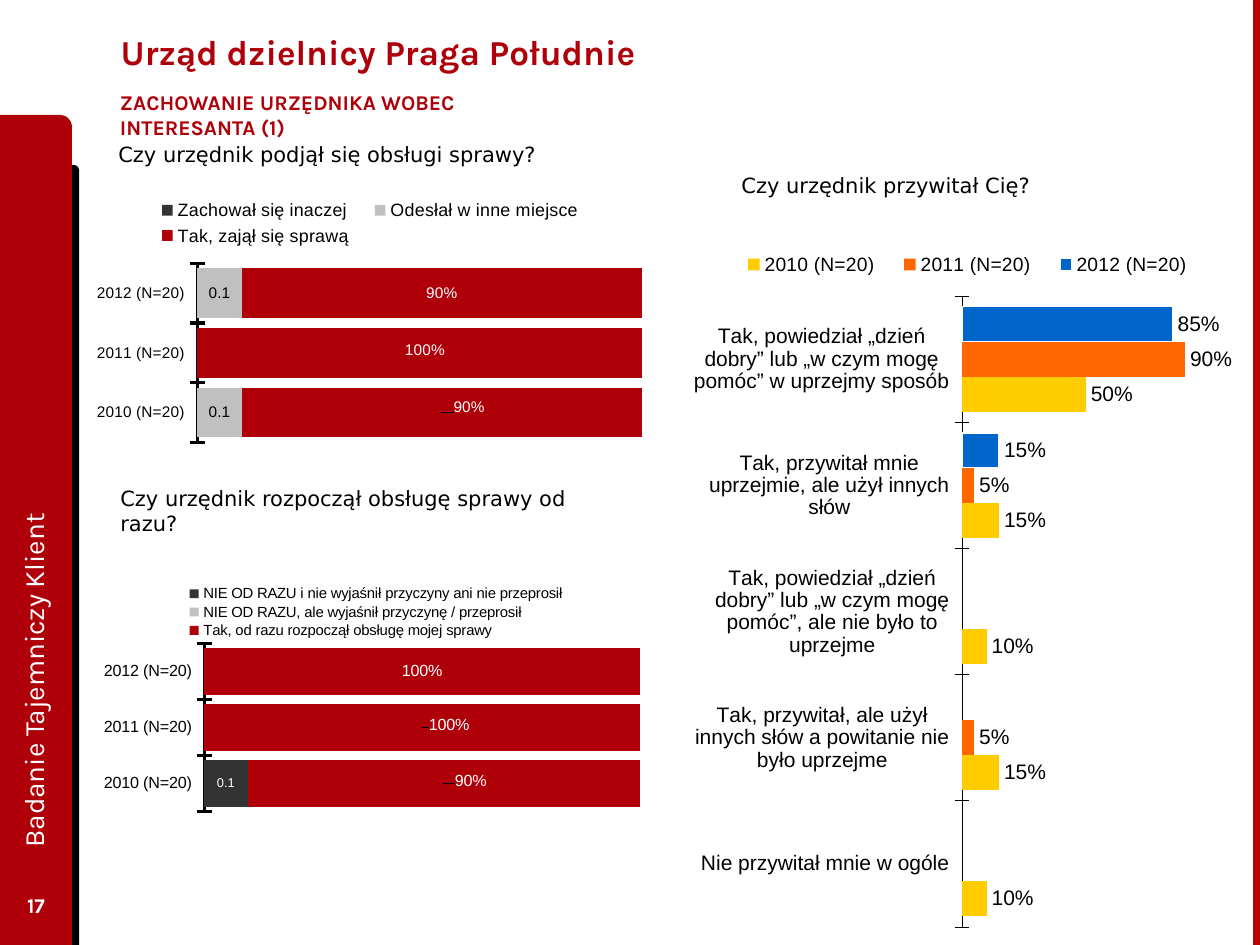
import pptx
import pptx.chart.data
import pptx.dml.color
import pptx.enum.chart
import pptx.enum.shapes
import pptx.enum.text
import pptx.oxml
import pptx.oxml.ns
import pptx.util

RED, BLACK, WHITE, DARK, GREY = "AF000A", "000000", "FFFFFF", "333333", "C0C0C0"
BLUE, ORANGE, YELLOW = "0066CC", "FF6600", "FFCC00"
CHART_TYPE = pptx.enum.chart.XL_CHART_TYPE
LABEL_POSITION = pptx.enum.chart.XL_LABEL_POSITION
LEGEND_POSITION = pptx.enum.chart.XL_LEGEND_POSITION
SHAPE = pptx.enum.shapes.MSO_SHAPE
ANCHOR = pptx.enum.text.MSO_ANCHOR
ALIGN = pptx.enum.text.PP_ALIGN
YEARS = ["2010 (N=20)", "2011 (N=20)", "2012 (N=20)"]


def px(length):
    return pptx.util.Emu(length * 914400 // 126)


def color(value):
    return pptx.dml.color.RGBColor.from_string(value)


def apply(target, values):
    for name, value in values.items():
        setattr(target, name, value)


def set_font(font, size, fill, name="Arial", bold=False):
    apply(font, {"size": pptx.util.Pt(size), "name": name, "bold": bold})
    font.color.rgb = color(fill)


def set_layout(parent, index, values, inner=False):
    qn = pptx.oxml.ns.qn
    for old in parent.findall(qn("c:layout")):
        parent.remove(old)
    layout = pptx.oxml.parse_xml(
        '<c:layout xmlns:c="http://schemas.openxmlformats.org/drawingml/2006/chart">'
        "<c:manualLayout/></c:layout>")
    fields = [("layoutTarget", "inner")] if inner else []
    if len(values) == 4:
        fields += [("xMode", "edge"), ("yMode", "edge")]
    fields += zip("xywh", values)
    for name, value in fields:
        layout[0].append(layout[0].makeelement(qn("c:" + name), {"val": str(value)}))
    parent.insert(index, layout)


class SlideBuilder:
    """Draws styled elements on the current slide."""

    def __init__(self, presentation):
        self.slide = presentation.slides.add_slide(presentation.slide_layouts[5])

    def panel(self, kind, box, fill):
        shape = self.slide.shapes.add_shape(kind, *map(px, box))
        shape.shadow.inherit = False
        shape.fill.solid()
        shape.fill.fore_color.rgb = color(fill)
        shape.line.fill.background()

    def set_text(self, shape, text, size, fill, name="Karla", bold=False,
                 align=ALIGN.LEFT, **frame_values):
        frame = shape.text_frame
        apply(frame, {"word_wrap": True, **frame_values})
        paragraph = frame.paragraphs[0]
        paragraph.alignment = align
        run = paragraph.add_run()
        run.text = text
        set_font(run.font, size, fill, name, bold)

    def title(self, box, text):
        shape = self.slide.shapes.title
        apply(shape, dict(zip(("left", "top", "width", "height"), map(px, box))))
        self.set_text(shape, text, 20, RED, bold=True, vertical_anchor=ANCHOR.MIDDLE)

    def text(self, box, text, size, fill, rotation=0, **values):
        shape = self.slide.shapes.add_textbox(*map(px, box))
        shape.rotation = rotation
        self.set_text(shape, text, size, fill, **values)

    def question(self, box, text):
        self.text(box, text, 12, BLACK, name="DejaVu Sans")

    def bar_chart(self, kind, box, categories, rows, plot_box, legend_box,
                  axis_size, legend_size, line_width, gap):
        data = pptx.chart.data.CategoryChartData()
        data.categories = categories
        for row in rows:
            data.add_series(row["name"], row["values"])
        chart = self.slide.shapes.add_chart(kind, *map(px, box), data).chart
        stacked = kind == CHART_TYPE.BAR_STACKED_100
        apply(chart, {"has_title": False, "has_legend": True})
        set_font(chart.font, axis_size, BLACK)

        apply(chart.legend, {
            "position": LEGEND_POSITION.TOP if stacked else LEGEND_POSITION.RIGHT,
            "include_in_layout": False})
        set_font(chart.legend.font, legend_size, BLACK)
        set_layout(chart.legend._element, 1, legend_box)

        plot = chart.plots[0]
        apply(plot, {"gap_width": gap, "overlap": 100 if stacked else 0,
                     "vary_by_categories": False})
        set_layout(chart._chartSpace.chart.plotArea, 0, plot_box, inner=True)

        axis = chart.category_axis
        apply(axis, {"major_tick_mark": pptx.enum.chart.XL_TICK_MARK.CROSS,
                     "has_major_gridlines": False, "reverse_order": not stacked})
        set_font(axis.tick_labels.font, axis_size, BLACK)
        axis.format.line.color.rgb = color(BLACK)
        axis.format.line.width = pptx.util.Pt(line_width)
        apply(chart.value_axis, {"visible": False, "has_major_gridlines": False})
        if not stacked:
            apply(chart.value_axis, {"minimum_scale": 0, "maximum_scale": 1, "major_unit": 0.2})

        for series, row in zip(plot.series, rows):
            self.style_series(series, row, stacked)

    def style_series(self, series, row, stacked):
        series.invert_if_negative = False
        series.format.fill.solid()
        series.format.fill.fore_color.rgb = color(row["fill"])
        if "outline" in row:
            series.format.line.color.rgb = color(row["outline"])
            series.format.line.width = pptx.util.Pt(1)
        position = LABEL_POSITION.CENTER if stacked else LABEL_POSITION.OUTSIDE_END
        labels = series.data_labels
        apply(labels, {"show_value": True, "position": position,
                       "number_format": row.get("format", "0%"),
                       "number_format_is_linked": False})
        set_font(labels.font, row["size"], row["ink"])
        for index, offset in enumerate(row.get("offsets", [])):
            label = series.points[index].data_label
            set_font(label.font, row["size"], row["ink"])
            element = label._dLbl
            set_layout(element, 1, offset)
            number_format = element.makeelement(
                pptx.oxml.ns.qn("c:numFmt"), {"formatCode": "0%", "sourceLinked": "0"})
            element.insert(2, number_format)


def main():
    presentation = pptx.Presentation()
    apply(presentation, {"slide_width": px(1260), "slide_height": px(945)})
    builder = SlideBuilder(presentation)

    builder.panel(SHAPE.ROUND_1_RECTANGLE, (49, 165, 30, 780), BLACK)
    builder.panel(SHAPE.ROUND_1_RECTANGLE, (0, 115, 72, 830), RED)
    builder.panel(SHAPE.RECTANGLE, (1253, 0, 7, 945), "BD0000")
    builder.title((108, 6, 979, 91), "Urząd dzielnicy Praga Południe")
    builder.text((-330, 465, 726, 64), "Badanie Tajemniczy Klient", 16, WHITE,
                 rotation=270, vertical_anchor=ANCHOR.MIDDLE)
    builder.text((0, 880, 72, 50), "17", 12, WHITE, bold=True, align=ALIGN.CENTER,
                 vertical_anchor=ANCHOR.MIDDLE)
    builder.text((95, 83, 485, 42), "ZACHOWANIE URZĘDNIKA WOBEC INTERESANTA (1)",
                 12, RED, bold=True, word_wrap=False, margin_left=px(25), margin_right=px(25))
    builder.question((108, 479, 490, 63), "Czy urzędnik rozpoczął obsługę sprawy od razu?")
    builder.question((106, 135, 501, 38), "Czy urzędnik podjął się obsługi sprawy?")
    builder.question((729, 166, 360, 38), "Czy urzędnik przywitał Cię?")

    greetings = [
        "Tak, powiedział „dzień dobry” lub „w czym mogę pomóc” w uprzejmy sposób",
        "Tak, przywitał mnie uprzejmie, ale użył innych słów",
        "Tak, powiedział „dzień dobry” lub „w czym mogę pomóc”, ale nie było to uprzejme",
        "Tak, przywitał, ale użył innych słów a powitanie nie było uprzejme",
        "Nie przywitał mnie w ogóle"]
    greeting_label = {"size": 12, "ink": BLACK}
    builder.bar_chart(
        CHART_TYPE.BAR_CLUSTERED, (692, 226, 551, 701), greetings,
        [{"name": YEARS[2], "values": (0.85, 0.15, None, None, None), "fill": BLUE,
          "outline": WHITE, **greeting_label},
         {"name": YEARS[1], "values": (0.9, 0.05, None, 0.05, None), "fill": ORANGE,
          **greeting_label},
         {"name": YEARS[0], "values": (0.5, 0.15, 0.1, 0.15, 0.1), "fill": YELLOW,
          **greeting_label}],
        (0.49, 0.1, 0.45, 0.9), (0.06, 0.03, 0.88, 0.05), 12, 11, 0.25, 60)

    builder.bar_chart(
        CHART_TYPE.BAR_STACKED_100, (102, 581, 538, 232), YEARS,
        [{"name": "NIE OD RAZU i nie wyjaśnił przyczyny ani nie przeprosił",
          "values": (0.1, None, None), "fill": DARK, "size": 7.3, "ink": WHITE,
          "format": "General"},
         {"name": "NIE OD RAZU, ale wyjaśnił przyczynę / przeprosił",
          "values": (None, None, None), "fill": GREY, "size": 9.2, "ink": WHITE,
          "format": "General"},
         {"name": "Tak, od razu rozpoczął obsługę mojej sprawy",
          "values": (0.9, 1, 1), "fill": RED, "size": 9.2, "ink": WHITE,
          "offsets": [(0.05, -0.01), (0.05, -0.01)]}],
        (0.19, 0.27, 0.81, 0.73), (0.15, 0.01, 0.72, 0.25), 9.2, 8.5, 1.84, 20)

    builder.bar_chart(
        CHART_TYPE.BAR_STACKED_100, (93, 193, 549, 260), YEARS,
        [{"name": "Zachował się inaczej", "values": (None, None, None), "fill": DARK,
          "size": 8.8, "ink": WHITE, "format": "General"},
         {"name": "Odesłał w inne miejsce", "values": (0.1, None, 0.1), "fill": GREY,
          "size": 8.8, "ink": BLACK, "format": "General"},
         {"name": "Tak, zajął się sprawą", "values": (0.9, 1, 0.9), "fill": RED,
          "size": 8.8, "ink": WHITE, "offsets": [(0.05, -0.02), (0.01, -0.01)]}],
        (0.19, 0.27, 0.81, 0.69), (0.09, 0.01, 0.83, 0.21), 8.8, 10.2, 1.86, 20)

    presentation.save("out.pptx")


if __name__ == "__main__":
    main()
